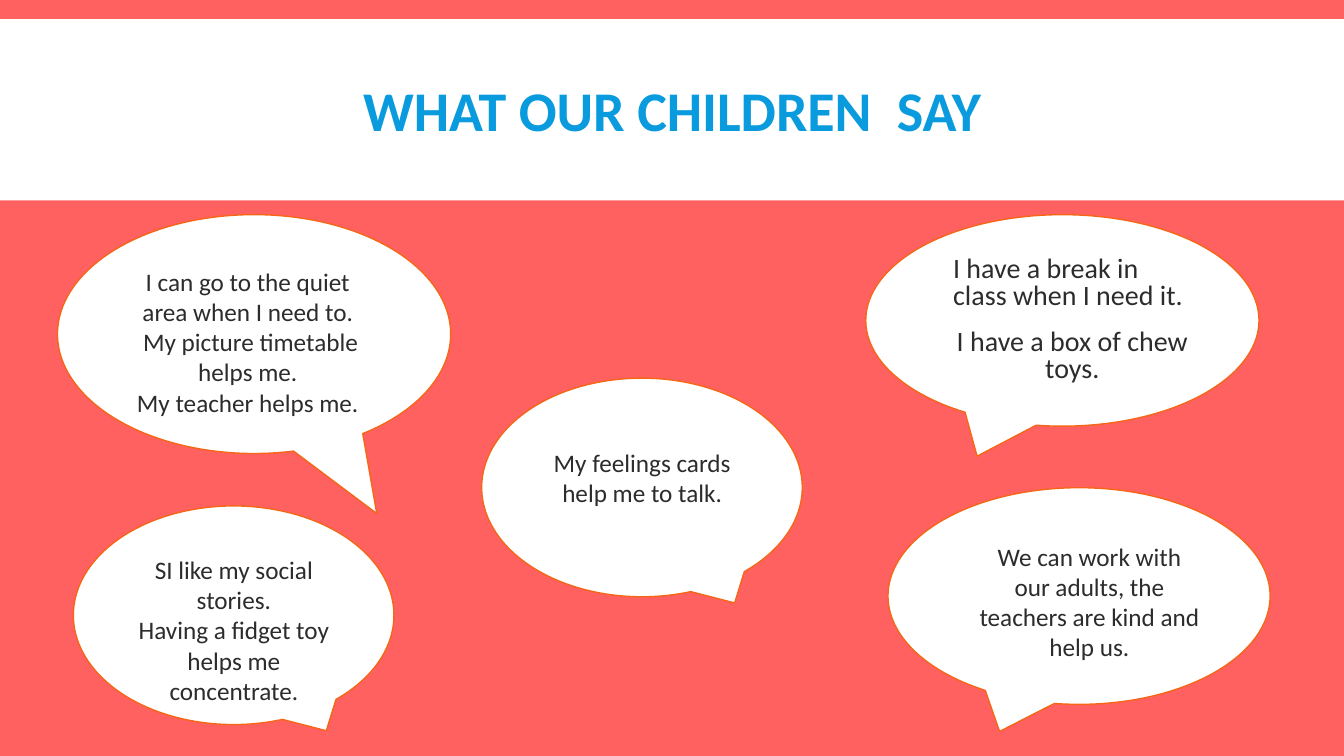
"""Build the slide of speech bubbles with what the children say."""
from pptx import Presentation
from pptx.dml.color import RGBColor
from pptx.enum.shapes import MSO_SHAPE
from pptx.enum.text import MSO_ANCHOR, MSO_AUTO_SIZE, PP_ALIGN
from pptx.util import Cm, Pt

RECT = MSO_SHAPE.RECTANGLE
CALLOUT = MSO_SHAPE.OVAL_CALLOUT
TOP, MIDDLE = MSO_ANCHOR.TOP, MSO_ANCHOR.MIDDLE
LEFT, CENTER = PP_ALIGN.LEFT, PP_ALIGN.CENTER
GROW = MSO_AUTO_SIZE.SHAPE_TO_FIT_TEXT
COLORS = {"coral": "FF6161", "white": "FFFFFF", "title": "099BDD",
          "text": "2C2C2C", "outline": "F56617"}
FONT = "Calibri"


def rgb(name):
    return RGBColor.from_string(COLORS[name])


def add_paragraph(tf, text, first=False, size=18, color="text", bold=False,
                  align=CENTER, spacing=None, before=None, after=None, margin=None):
    p = tf.paragraphs[0] if first else tf.add_paragraph()
    p.alignment = align
    p.line_spacing = spacing
    if before is not None:
        p.space_before = Pt(before)
    if after is not None:
        p.space_after = Pt(after)
    if margin is not None:
        p._p.get_or_add_pPr().set("marL", str(Cm(margin)))
    r = p.add_run()
    r.text = text
    r.font.name, r.font.size, r.font.bold = FONT, Pt(size), bold
    r.font.color.rgb = rgb(color)


class SlideBuilder:
    def __init__(self, prs):
        self.s = prs.slides.add_slide(prs.slide_layouts[6])

    def background(self, color):
        fill = self.s.background.fill
        fill.solid()
        fill.fore_color.rgb = rgb(color)

    def shape(self, kind, box, line=None):
        sp = self.s.shapes.add_shape(kind, *map(Cm, box))
        sp.shadow.inherit = False
        sp.fill.solid()
        sp.fill.fore_color.rgb = rgb("white")
        if line:
            sp.line.color.rgb = rgb(line)
            sp.line.width = Pt(1)
        else:
            sp.line.fill.background()
        return sp

    def bubble(self, box, tail):
        sp = self.shape(CALLOUT, box, line="outline")
        sp.adjustments[0], sp.adjustments[1] = tail
        return sp

    def text(self, box, lines, anchor=TOP, grow=True, **style):
        tf = self.s.shapes.add_textbox(*map(Cm, box)).text_frame
        tf.word_wrap = True
        tf.vertical_anchor = anchor
        if grow:
            tf.auto_size = GROW
        for i, line in enumerate(lines):
            add_paragraph(tf, line, first=i == 0, **style)


SHORT_TAIL = (0.289, 0.528)
BUBBLES = [
    ((1.45, 5.41, 9.91, 6.02), (0.312, 0.751), (2.79, 6.58, 6.91, 4.11),
     ["I can go to the quiet area when I need to.",
      " My picture timetable helps me.",
      "My teacher helps me."]),
    ((1.85, 12.75, 8.08, 5.51), SHORT_TAIL, (2.87, 13.84, 6.05, 4.11),
     ["SI like my social stories.",
      "Having a fidget toy helps me concentrate."]),
    ((12.14, 9.53, 8.08, 5.51), SHORT_TAIL, (13.16, 11.15, 6.05, 1.8),
     ["My feelings cards help me to talk."]),
    ((22.38, 12.29, 9.63, 5.46), (-0.208, 0.625), (24.43, 13.51, 6.05, 3.33),
     ["We can work with our adults, the teachers are kind and help us."]),
]
BREAK_LINES = [("I have a break in class when I need it.", LEFT),
               ("I have a box of chew toys.", CENTER)]


def main():
    prs = Presentation()
    prs.slide_width, prs.slide_height = Cm(33.87), Cm(19.05)
    b = SlideBuilder(prs)
    b.background("coral")
    b.shape(RECT, (0, 0.48, 33.87, 4.57))
    b.text((3.35, 0.79, 27.18, 4.19), ["WHAT OUR CHILDREN  SAY"], anchor=MIDDLE,
           grow=False, size=40, color="title", bold=True, spacing=0.85)
    for box, tail, text_box, lines in BUBBLES:
        b.bubble(box, tail)
        b.text(text_box, lines)
    tf = b.bubble((21.82, 5.41, 9.91, 5.33), (-0.217, 0.642)).text_frame
    tf.word_wrap = True
    tf.vertical_anchor = MIDDLE
    for i, (line, align) in enumerate(BREAK_LINES):
        add_paragraph(tf, line, first=i == 0, size=20, align=align,
                      spacing=0.8, before=12, after=2, margin=0.5)
    prs.save("out.pptx")


if __name__ == "__main__":
    main()
